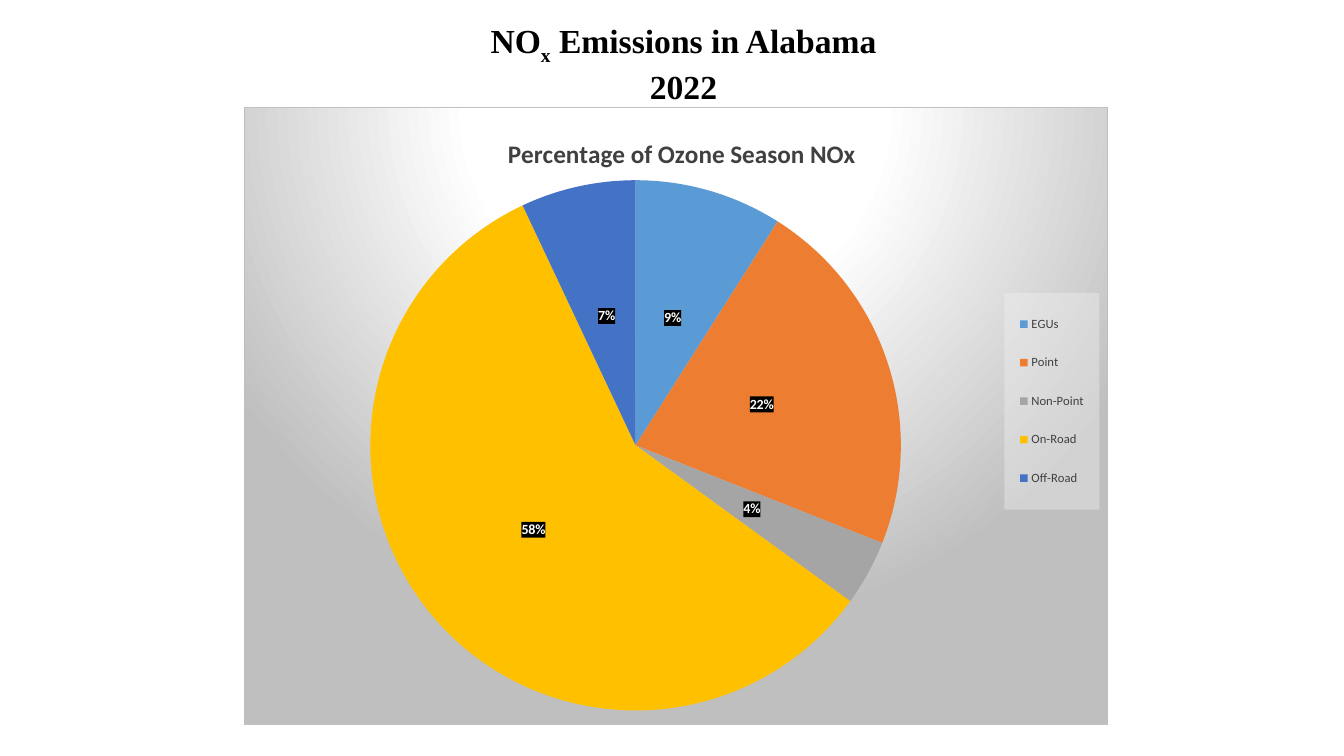
import pptx
import pptx.util
import pptx.dml.color
import pptx.chart.data
import pptx.enum.chart
import pptx.enum.text
import pptx.oxml
import pptx.oxml.ns

Pt = pptx.util.Pt
qn = pptx.oxml.ns.qn
NS = pptx.oxml.ns.nsdecls("a", "c")
HUES = {
    "ink": "000000", "white": "FFFFFF", "gray": "BFBFBF", "dark": "404040", "pale": "F2F2F2",
    "EGUs": "5B9BD5", "Point": "ED7D31", "Non-Point": "A5A5A5",
    "On-Road": "FFC000", "Off-Road": "4472C4",
}
SHARES = {"EGUs": 9, "Point": 22, "Non-Point": 4, "On-Road": 58, "Off-Road": 7}


def style(font, hue, **looks):
    for name, value in looks.items():
        setattr(font, name, value)
    font.color.rgb = pptx.dml.color.RGBColor.from_string(HUES[hue])


def parts(inner):
    return pptx.oxml.parse_xml(f"<c:spPr {NS}>{inner}</c:spPr>")


def glass(hue, alpha):
    return parts(f'<a:solidFill><a:srgbClr val="{HUES[hue]}">'
                 f'<a:alpha val="{alpha * 1000}"/></a:srgbClr></a:solidFill>')


def layout(owner, after, inner=False, **spots):
    for old in owner.findall(qn("c:layout")):
        owner.remove(old)
    target = '<c:layoutTarget val="inner"/>' if inner else ""
    modes = "".join(f'<c:{key}Mode val="edge"/>' for key in spots if key in "xy")
    sizes = "".join(f'<c:{key} val="{value}"/>' for key, value in spots.items())
    node = pptx.oxml.parse_xml(f"<c:layout {NS}><c:manualLayout>{target}{modes}{sizes}"
                               "</c:manualLayout></c:layout>")
    if after:
        owner.find(qn(after)).addnext(node)
    else:
        owner.insert(0, node)


def backdrop(chart):
    stops = "".join(f'<a:gs pos="{spot * 1000}"><a:srgbClr val="{HUES[hue]}"/></a:gs>'
                    for spot, hue in ((0, "white"), (39, "white"), (100, "gray")))
    fill = parts(f'<a:gradFill><a:gsLst>{stops}</a:gsLst><a:path path="circle">'
                 '<a:fillToRect l="50000" t="-80000" r="50000" b="180000"/></a:path></a:gradFill>'
                 f'<a:ln w="9525"><a:solidFill><a:srgbClr val="{HUES["gray"]}"/></a:solidFill></a:ln>')
    chart.element.find(qn("c:chart")).addnext(fill)


def heading(slide, left, top, width, height):
    frame = slide.shapes.add_textbox(Pt(left), Pt(top), Pt(width), Pt(height)).text_frame
    frame.word_wrap = False
    frame.auto_size = pptx.enum.text.MSO_AUTO_SIZE.SHAPE_TO_FIT_TEXT
    first, second = frame.paragraphs[0], frame.add_paragraph()
    for para, texts in ((first, ("NO", "x", " Emissions in Alabama")), (second, ("2022",))):
        para.alignment = pptx.enum.text.PP_ALIGN.CENTER
        for text in texts:
            run = para.add_run()
            run.text = text
            style(run.font, "ink", name="Times New Roman", size=Pt(24), bold=True)
            if text == "x":
                run.font._element.set("baseline", "-25000")


def pie(slide, left, top, width, height):
    data = pptx.chart.data.CategoryChartData()
    data.categories = list(SHARES)
    data.add_series("Series 1", list(SHARES.values()))
    chart = slide.shapes.add_chart(pptx.enum.chart.XL_CHART_TYPE.PIE, Pt(left), Pt(top),
                                   Pt(width), Pt(height), data).chart
    style(chart.font, "ink", name="Calibri", size=Pt(10))
    backdrop(chart)

    chart.has_title = True
    title = chart.chart_title
    title.include_in_layout = False
    title.text_frame.text = "Percentage of Ozone Season NOx"
    style(title.text_frame.paragraphs[0].runs[0].font, "dark",
          name="Calibri", size=Pt(18), bold=True)
    layout(title.element, "c:tx", x=0.3, y=0.04)

    plot = chart.plots[0]
    plot.vary_by_categories = True
    layout(chart.element.find(".//" + qn("c:plotArea")), None, inner=True,
           x=0.146, y=0.118, w=0.615, h=0.86)
    for spot, name in enumerate(SHARES):
        fill = plot.series[0].points[spot].format.fill
        fill.solid()
        fill.fore_color.rgb = pptx.dml.color.RGBColor.from_string(HUES[name])

    plot.has_data_labels = True
    labels = plot.data_labels
    looks = {"show_percentage": True, "show_value": False, "number_format": "0%",
             "number_format_is_linked": False,
             "position": pptx.enum.chart.XL_LABEL_POSITION.CENTER}
    for name, value in looks.items():
        setattr(labels, name, value)
    style(labels.font, "white", name="Calibri", size=Pt(10), bold=True)
    labels._element.find(qn("c:numFmt")).addnext(glass("ink", 75))

    chart.has_legend = True
    legend = chart.legend
    legend.position = pptx.enum.chart.XL_LEGEND_POSITION.RIGHT
    legend.include_in_layout = False
    style(legend.font, "dark", name="Calibri", size=Pt(9))
    node = legend._element
    layout(node, "c:legendPos", x=0.881, y=0.301, w=0.11, h=0.351)
    node.find(qn("c:overlay")).addnext(glass("pale", 39))


def main():
    deck = pptx.Presentation()
    deck.slide_width, deck.slide_height = Pt(960), Pt(540)
    slide = deck.slides.add_slide(deck.slide_layouts[6])
    heading(slide, 341.3, 10.8, 293.8, 65.5)
    pie(slide, 174.2, 76.3, 617, 441.4)
    deck.save("out.pptx")


if __name__ == "__main__":
    main()
